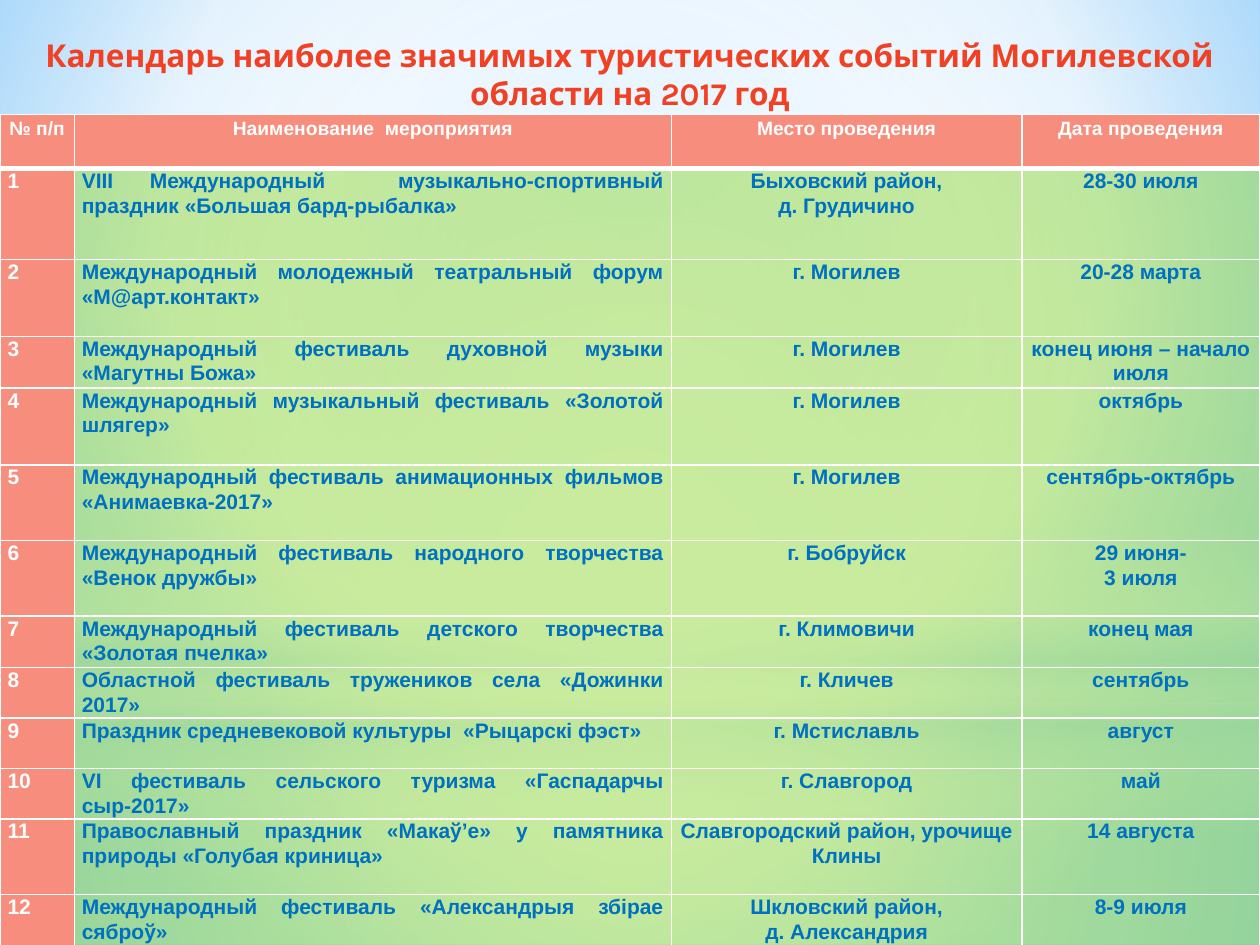
import pptx
import pptx.util
import pptx.oxml
import pptx.oxml.ns
import pptx.dml.color
import pptx.enum.shapes
import pptx.enum.text

Inches, Pt, qn = pptx.util.Inches, pptx.util.Pt, pptx.oxml.ns.qn
RGB = pptx.dml.color.RGBColor
SHAPES, ALIGN = pptx.enum.shapes.MSO_SHAPE, pptx.enum.text.PP_ALIGN

WHITE = RGB(0xFF, 0xFF, 0xFF)
SKY = RGB(0xB4, 0xDC, 0xFA)
LIGHT_BLUE = RGB(0x9E, 0xD5, 0xFF)
DEEP_BLUE = RGB(0x5B, 0xB9, 0xFF)
RED = RGB(0xF1, 0x41, 0x24)
CORAL = RGB(0xF7, 0x8D, 0x7C)
GREEN = RGB(0x81, 0xD3, 0x1A)
TEXT_BLUE = RGB(0x00, 0x70, 0xC0)
NS = pptx.oxml.ns.nsdecls("a")
CENTRE = (50, 50, 50, 50)


def set_gradient(fill, holder, stops, focus=None):
    """Fill with (position, colour, opacity) stops: round a focus rectangle, else downwards."""
    fill.solid()
    marks = "".join(
        f'<a:gs pos="{pos * 1000}"><a:srgbClr val="{colour}">'
        f'<a:alpha val="{opacity * 1000}"/></a:srgbClr></a:gs>'
        for pos, colour, opacity in stops)
    if focus:
        sides = " ".join(f'{side}="{inset * 1000}"' for side, inset in zip("ltrb", focus))
        direction = f'<a:path path="circle"><a:fillToRect {sides}/></a:path>'
    else:
        direction = '<a:lin ang="5400000" scaled="0"/>'
    solid = holder.find(qn("a:solidFill"))
    holder.replace(solid, pptx.oxml.parse_xml(
        f'<a:gradFill {NS} rotWithShape="1"><a:gsLst>{marks}</a:gsLst>{direction}</a:gradFill>'))


def style_cell(cell, text, align, size, text_colour, fill_colour, opacity, bottom_width):
    cell.margin_left = cell.margin_right = Inches(0.06)
    cell.margin_top = cell.margin_bottom = 0
    cell.text_frame.text = text
    for paragraph in cell.text_frame.paragraphs:
        paragraph.alignment = align
        paragraph.line_spacing = Pt(14)
        for run in paragraph.runs:
            run.font.name, run.font.size, run.font.bold = "Arial", Pt(size), True
            run.font.color.rgb = text_colour
    cell.fill.solid()
    cell.fill.fore_color.rgb = fill_colour
    properties = cell._tc.get_or_add_tcPr()
    if opacity < 100:
        properties.find(".//" + qn("a:srgbClr")).append(
            pptx.oxml.parse_xml(f'<a:alpha {NS} val="{opacity * 1000}"/>'))
    for index, side in enumerate("LRTB"):
        width = Pt(bottom_width if side == "B" else 1)
        properties.insert(index, pptx.oxml.parse_xml(
            f'<a:ln{side} {NS} w="{width}"><a:solidFill><a:srgbClr val="{WHITE}"/>'
            f'</a:solidFill></a:ln{side}>'))


prs = pptx.Presentation()
prs.slide_width, prs.slide_height = Inches(10), Inches(7.5)
slide = prs.slides.add_slide(prs.slide_layouts[6])

# Sky backdrop: a round gradient under four translucent veils
backdrop = slide.background.fill
backdrop.solid()
set_gradient(backdrop, slide._element.find(".//" + qn("p:bgPr")),
             [(0, LIGHT_BLUE, 100), (60, WHITE, 100), (100, DEEP_BLUE, 100)],
             (20, 10, 20, 60))
veils = [
    (SHAPES.RECTANGLE, 5.58, 1.92,
     [(0, WHITE, 91), (37, WHITE, 76), (100, SKY, 79)], CENTRE),
    (SHAPES.RECTANGLE, 0, 5.58,
     [(0, WHITE, 89), (48, WHITE, 62), (100, SKY, 79)], CENTRE),
    (SHAPES.RECTANGLE, 4.12, 2.5,
     [(0, WHITE, 0), (29, WHITE, 30), (45, SKY, 40), (55, WHITE, 26),
      (65, SKY, 60), (100, WHITE, 0)], None),
    (SHAPES.OVAL, 1.75, 5.58, [(0, WHITE, 100), (56, WHITE, 0)], CENTRE),
]
for outline, top, height, stops, focus in veils:
    veil = slide.shapes.add_shape(outline, 0, Inches(top), prs.slide_width, Inches(height))
    veil.shadow.inherit = False
    veil.line.fill.background()
    set_gradient(veil.fill, veil._element.spPr, stops, focus)

heading = slide.shapes.add_textbox(0, Inches(0.24), prs.slide_width, Inches(0.71)).text_frame
heading.word_wrap = True
heading.text = ("Календарь наиболее значимых туристических событий Могилевской "
                "области на 2017 год")
heading.paragraphs[0].alignment = ALIGN.CENTER
heading_font = heading.paragraphs[0].runs[0].font
heading_font.name, heading_font.size, heading_font.bold = "Karla", Pt(18), True
heading_font.color.rgb = RED

# Row height, event, place, date
column_titles = ("№ п/п", "Наименование  мероприятия", "Место проведения", "Дата проведения")
events = [
    (0.72, "VIII Международный  музыкально-спортивный праздник «Большая бард-рыбалка»",
     "Быховский район,\nд. Грудичино", "28-30 июля"),
    (0.61, "Международный молодежный театральный форум «М@арт.контакт»",
     "г. Могилев", "20-28 марта"),
    (0.41, "Международный фестиваль духовной музыки «Магутны Божа»",
     "г. Могилев", "конец июня – начало июля"),
    (0.61, "Международный музыкальный фестиваль «Золотой шлягер»",
     "г. Могилев", "октябрь"),
    (0.6, "Международный фестиваль анимационных фильмов «Анимаевка-2017»",
     "г. Могилев", "сентябрь-октябрь"),
    (0.6, "Международный фестиваль народного творчества «Венок дружбы»",
     "г. Бобруйск", "29 июня-\n3 июля"),
    (0.41, "Международный фестиваль детского творчества «Золотая пчелка»",
     "г. Климовичи", "конец мая"),
    (0.4, "Областной фестиваль тружеников села «Дожинки 2017»",
     "г. Кличев", "сентябрь"),
    (0.4, "Праздник средневековой культуры  «Рыцарскі фэст»",
     "г. Мстиславль", "август"),
    (0.4, "VI фестиваль сельского туризма «Гаспадарчы сыр-2017»",
     "г. Славгород", "май"),
    (0.6, "Православный праздник «Макаў’е» у памятника природы «Голубая криница»",
     "Славгородский район, урочище Клины", "14 августа"),
    (0.41, "Международный фестиваль «Александрыя збірае сяброў»",
     "Шкловский район,\nд. Александрия", "8-9 июля"),
]
calendar = slide.shapes.add_table(len(events) + 1, len(column_titles), 0, Inches(0.91),
                                  prs.slide_width, Inches(6.58)).table
calendar.horz_banding = calendar.first_row = False
for column, width in zip(calendar.columns, (0.59, 4.74, 2.78, 1.89)):
    column.width = Inches(width)

calendar.rows[0].height = Inches(0.43)
for col, title in enumerate(column_titles):
    style_cell(calendar.cell(0, col), title, ALIGN.CENTER, 11, WHITE, CORAL, 100, 3)

for number, (height, *details) in enumerate(events, start=1):
    calendar.rows[number].height = Inches(height)
    style_cell(calendar.cell(number, 0), str(number), ALIGN.JUSTIFY, 12, WHITE, CORAL, 100, 1)
    for col, detail in enumerate(details, start=1):
        align = ALIGN.JUSTIFY if col == 1 else ALIGN.CENTER
        style_cell(calendar.cell(number, col), detail, align, 12, TEXT_BLUE, GREEN, 42, 1)
# The heavy rule under the titles is shared with the first event row
for cell in calendar.rows[1].cells:
    cell._tc.tcPr.find(qn("a:lnT")).set("w", str(Pt(3)))

prs.save("out.pptx")
